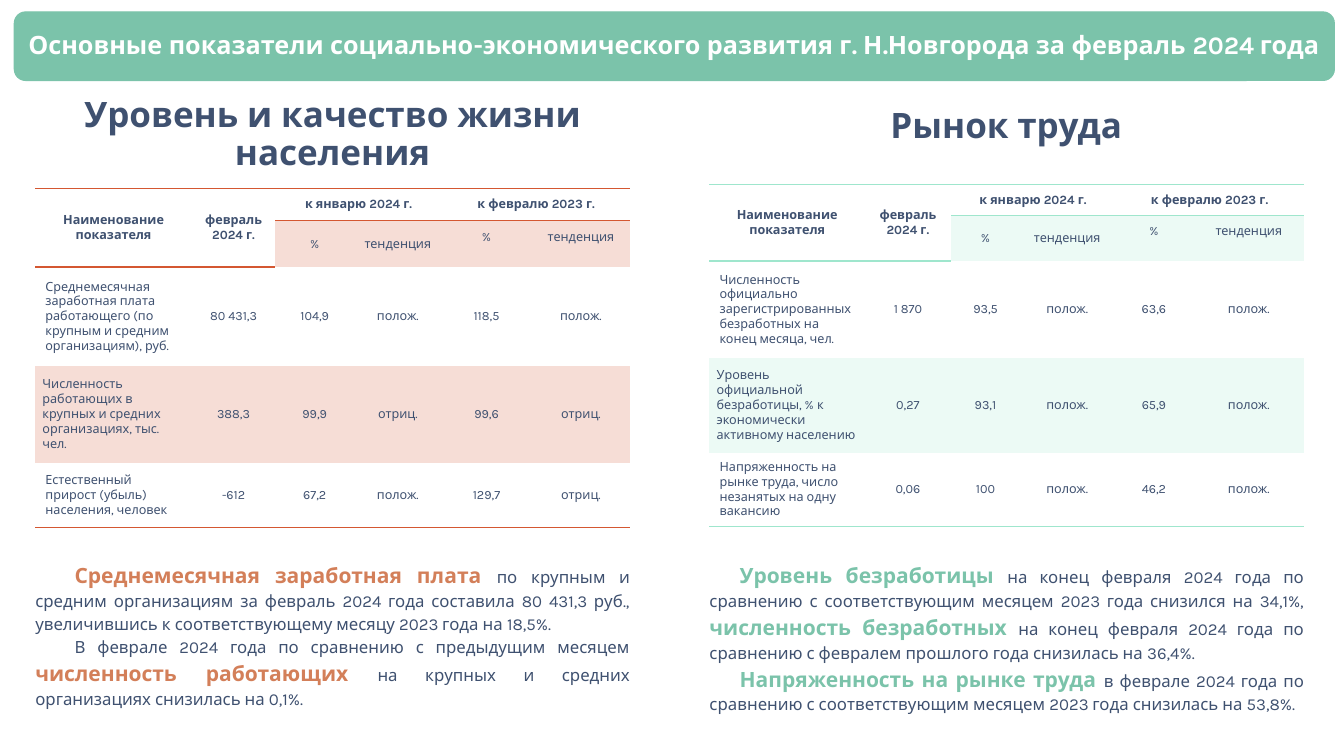
from lxml.etree import SubElement
from pptx import Presentation
from pptx.dml.color import RGBColor
from pptx.enum.shapes import MSO_SHAPE
from pptx.enum.text import MSO_ANCHOR, PP_ALIGN
from pptx.oxml.ns import qn
from pptx.util import Cm, Pt

FONT = "Karla"
NAVY = RGBColor(0x3F, 0x51, 0x70)
WHITE = RGBColor(0xFF, 0xFF, 0xFF)
GREEN = RGBColor(0x7B, 0xC3, 0xAA)
ORANGE = RGBColor(0xD3, 0x7F, 0x59)
RED = RGBColor(0xD4, 0x57, 0x31)
MINT = RGBColor(0x9F, 0xE6, 0xCD)
PALE_RED = RGBColor(0xF6, 0xDD, 0xD6)
PALE_MINT = RGBColor(0xEC, 0xFA, 0xF5)

SUBHEADS = ["", "", "%", "тенденция", "%", "тенденция"]

LIVING_ROWS = [
    ["Наименование показателя", "февраль 2024 г.", "к январю 2024 г.", "", "к февралю 2023 г.", ""],
    SUBHEADS,
    ["Среднемесячная заработная плата работающего (по крупным и средним организациям), руб.",
     "80 431,3", "104,9", "полож.", "118,5", "полож."],
    ["Численность работающих в крупных и средних организациях, тыс. чел.",
     "388,3", "99,9", "отриц.", "99,6", "отриц."],
    ["Естественный прирост (убыль) населения, человек",
     "-612", "67,2", "полож.", "129,7", "отриц."],
]
LABOUR_ROWS = [
    ["Наименование показателя", "февраль\n2024 г.", "к январю 2024 г.", "", "к февралю 2023 г.", ""],
    SUBHEADS,
    ["Численность официально зарегистрированных безработных на конец месяца, чел.",
     "1 870", "93,5", "полож.", "63,6", "полож."],
    ["Уровень официальной безработицы, % к экономически активному населению",
     "0,27", "93,1", "полож.", "65,9", "полож."],
    ["Напряженность на рынке труда, число незанятых на одну вакансию",
     "0,06", "100", "полож.", "46,2", "полож."],
]
LIVING_NOTES = [
    [("Среднемесячная заработная плата ", True),
     ("по крупным и средним организациям за февраль 2024 года составила 80 431,3 руб., "
      "увеличившись к соответствующему месяцу 2023 года на 18,5%.", False)],
    [("В феврале 2024 года по сравнению с предыдущим месяцем ", False),
     ("численность работающих ", True),
     ("на крупных и средних организациях снизилась на 0,1%.", False)],
]
LABOUR_NOTES = [
    [("Уровень безработицы ", True),
     ("на конец февраля 2024 года по сравнению с соответствующим месяцем 2023 года "
      "снизился на 34,1%, ", False),
     ("численность безработных ", True),
     ("на конец февраля 2024 года по сравнению с февралем прошлого года "
      "снизилась на 36,4%.", False)],
    [("Напряженность на рынке труда ", True),
     ("в феврале 2024 года по сравнению с соответствующим месяцем 2023 года "
      "снизилась на 53,8%.", False)],
]


def style_font(font, size, color, bold):
    font.name = FONT
    font.size = Pt(size)
    font.color.rgb = color
    font.bold = bold


def fill_heading(frame, text, size, color, inset):
    frame.word_wrap = True
    frame.margin_left = frame.margin_right = Cm(inset)
    frame.margin_top = frame.margin_bottom = Cm(inset)
    para = frame.paragraphs[0]
    para.text = text
    para.alignment = PP_ALIGN.CENTER
    para.line_spacing = 0.9
    style_font(para.font, size, color, True)


def add_banner(page, text):
    banner = page.shapes.add_shape(
        MSO_SHAPE.ROUNDED_RECTANGLE, Cm(0.36), Cm(0.3), Cm(33.27), Cm(1.73))
    banner.shadow.inherit = False
    banner.fill.solid()
    banner.fill.fore_color.rgb = GREEN
    banner.line.color.rgb = GREEN
    banner.line.width = Pt(0)
    fill_heading(banner.text_frame, text, 18, WHITE, 0.18)
    banner.text_frame.vertical_anchor = MSO_ANCHOR.MIDDLE


def add_title(page, text, left, top, width, height):
    box = page.shapes.add_textbox(Cm(left), Cm(top), Cm(width), Cm(height))
    fill_heading(box.text_frame, text, 25, NAVY, 0.33)


def set_border(cell, side, color):
    line = SubElement(cell._tc.get_or_add_tcPr(), qn(f"a:ln{side}"), w=str(Pt(1)))
    if color is None:
        SubElement(line, qn("a:noFill"))
    else:
        solid = SubElement(line, qn("a:solidFill"))
        SubElement(solid, qn("a:srgbClr"), val=str(color))


def format_cell(cell, row, column, text, accent, tint):
    def rule_color(edge):
        header_edge = 2 if column < 2 else 1
        return accent if edge in (0, header_edge, 5) else None

    set_border(cell, "L", None)
    set_border(cell, "R", None)
    set_border(cell, "T", rule_color(row))
    set_border(cell, "B", rule_color(row + cell.span_height))
    if row == 3 or (row == 1 and column > 1):
        cell.fill.solid()
        cell.fill.fore_color.rgb = tint
    else:
        cell.fill.background()
    cell.vertical_anchor = MSO_ANCHOR.MIDDLE
    if row == 3 and column == 0:
        cell.margin_left = cell.margin_right = Cm(0.18)
        cell.margin_top = cell.margin_bottom = 0
    if row == 1 and column > 3:
        cell.margin_bottom = Cm(0.48)
    if text:
        cell.text = text
    for para in cell.text_frame.paragraphs:
        para.alignment = PP_ALIGN.LEFT if row > 1 and column == 0 else PP_ALIGN.CENTER
        style_font(para.font, 9, NAVY, row == 0)


def add_indicators(page, rows, left, top, widths, heights, accent, tint):
    frame = page.shapes.add_table(
        len(rows), len(widths), Cm(left), Cm(top), Cm(sum(widths)), Cm(sum(heights)))
    table = frame.table
    table.first_row = table.horz_banding = False
    for column, width in zip(table.columns, widths):
        column.width = Cm(width)
    for row, height in zip(table.rows, heights):
        row.height = Cm(height)
    for column in (0, 1):
        table.cell(0, column).merge(table.cell(1, column))
    for column in (2, 4):
        table.cell(0, column).merge(table.cell(0, column + 1))
    for row, texts in enumerate(rows):
        for column, text in enumerate(texts):
            format_cell(table.cell(row, column), row, column, text, accent, tint)


def add_notes_text(page, notes, left, height, indent, accent):
    box = page.shapes.add_textbox(Cm(left), Cm(13.97), Cm(15.49), Cm(height))
    frame = box.text_frame
    frame.word_wrap = True
    for index, parts in enumerate(notes):
        para = frame.add_paragraph() if index else frame.paragraphs[0]
        para.alignment = PP_ALIGN.JUSTIFY
        para.line_spacing = 1.14
        properties = para._p.get_or_add_pPr()
        properties.set("marL", "0")
        properties.set("indent", str(Cm(indent)))
        for text, key in parts:
            span = para.add_run()
            span.text = text
            style_font(span.font, 15 if key else 12, accent if key else NAVY, key)


def main():
    deck = Presentation()
    deck.slide_width = Cm(33.87)
    deck.slide_height = Cm(19.05)
    page = deck.slides.add_slide(deck.slide_layouts[6])

    add_title(page, "Уровень и качество жизни населения", 0.76, 2.13, 15.24, 2.03)
    add_indicators(page, LIVING_ROWS, 0.89, 4.75,
                   [3.94, 2.11, 1.98, 2.21, 2.26, 2.5],
                   [0.81, 1.17, 2.49, 2.44, 1.63], RED, PALE_RED)
    add_notes_text(page, LIVING_NOTES, 0.64, 4.01, 0.99, ORANGE)

    add_title(page, "Рынок труда", 21.18, 2.41, 8.36, 1.47)
    add_indicators(page, LABOUR_ROWS, 17.88, 4.65,
                   [3.91, 2.18, 1.73, 2.39, 1.98, 2.8],
                   [0.79, 1.14, 2.44, 2.39, 1.85], MINT, PALE_MINT)
    add_notes_text(page, LABOUR_NOTES, 17.63, 3.96, 0.76, GREEN)

    add_banner(page, "Основные показатели социально-экономического развития "
                     "г. Н.Новгорода за февраль 2024 года")
    deck.save("out.pptx")


if __name__ == "__main__":
    main()
